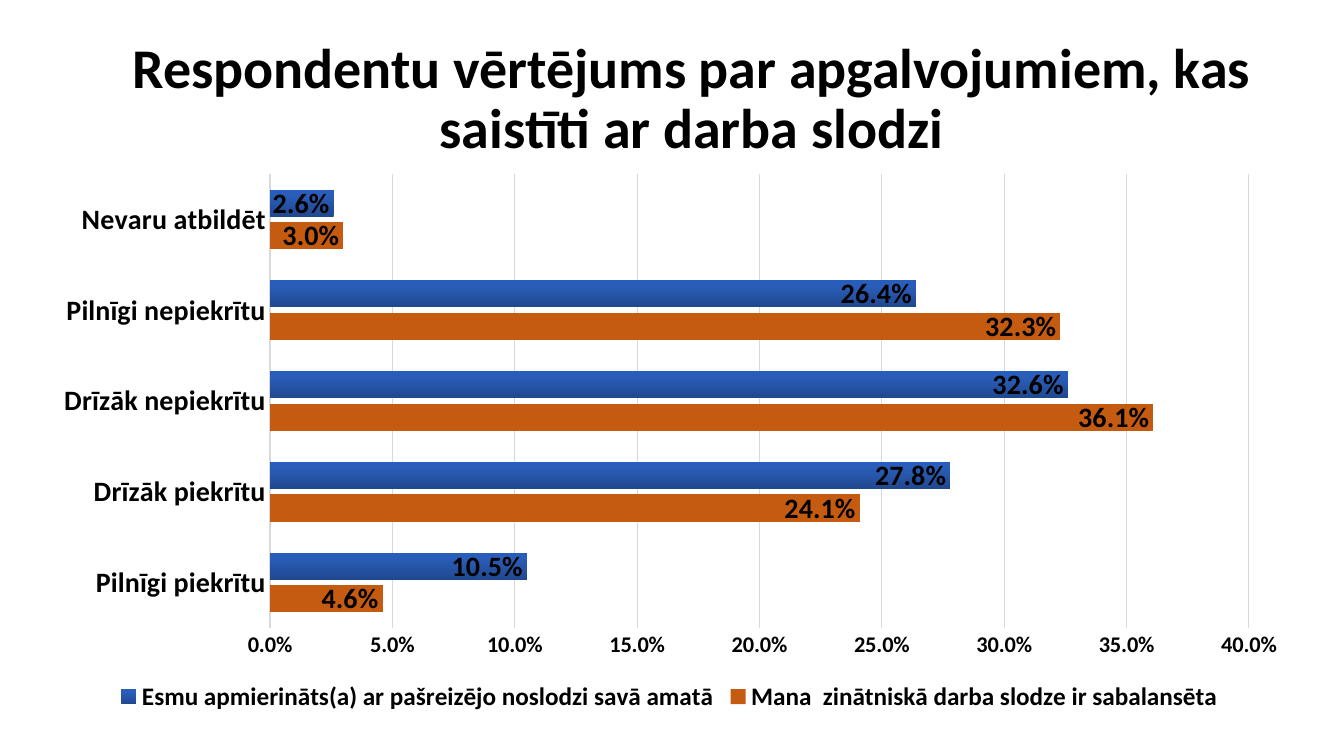
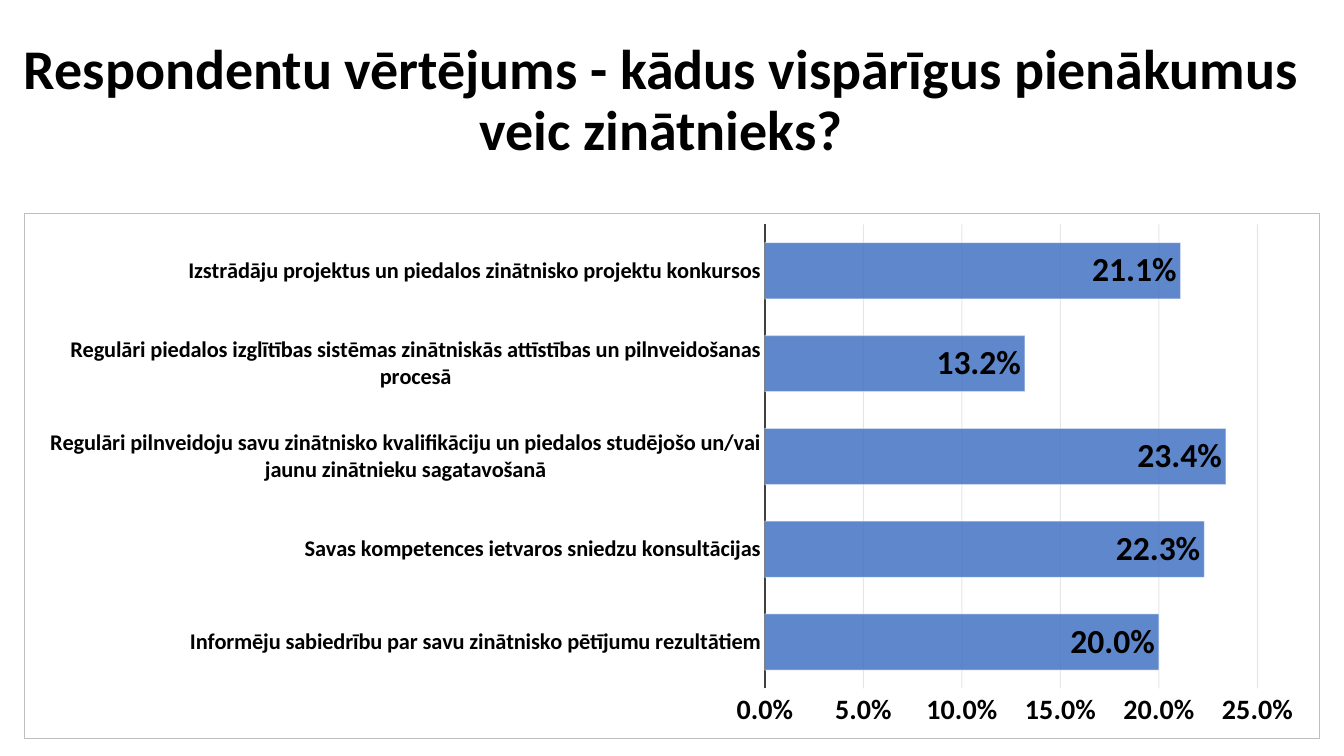
from copy import deepcopy

from lxml.etree import SubElement
from pptx import Presentation
from pptx.chart.data import CategoryChartData
from pptx.dml.color import RGBColor
from pptx.enum.chart import XL_CHART_TYPE, XL_LABEL_POSITION, XL_LEGEND_POSITION, XL_TICK_MARK
from pptx.enum.text import MSO_ANCHOR, PP_ALIGN
from pptx.oxml import parse_xml
from pptx.oxml.ns import nsdecls, qn
from pptx.util import Emu, Pt

PX = 914400 / 100.8
FONT = "Calibri"
PERCENT = "0.0%"
COLORS = {
    "text": "000000", "orange": "C55A11", "blue": "4472C4", "white": "FFFFFF",
    "grid": "D9D9D9", "faint": "0D0D0D", "axis": "404040", "frame": "BFBFBF",
}
BLUE_GRADIENT = [(0, "20488F"), (0.8, "2A5DB9"), (1, "275DBD")]

# Boxes are left, top, width, height in px; alpha is in percent
SLIDES = [
    {
        "title": "Respondentu vērtējums par apgalvojumiem, kas saistīti ar darba slodzi",
        "title_box": (112, 38, 1159, 125),
        "chart_box": (38, 163, 1263, 554),
        "plot_box": (270, 174, 979, 454),
        "categories": ["Pilnīgi piekrītu", "Drīzāk piekrītu", "Drīzāk nepiekrītu",
                       "Pilnīgi nepiekrītu", "Nevaru atbildēt"],
        "series": [
            ("Mana  zinātniskā darba slodze ir sabalansēta",
             [0.046, 0.241, 0.361, 0.323, 0.03], "orange"),
            ("Esmu apmierināts(a) ar pašreizējo noslodzi savā amatā",
             [0.105, 0.278, 0.326, 0.264, 0.026], "gradient"),
        ],
        "category_size": 20, "value_size": 16, "label_size": 20,
        "axis_line": ("grid", 1), "grid": ("grid", 100), "maximum": 0.4,
        "gap": 115, "overlap": -20, "legend": True, "frame": False,
    },
    {
        "title": "Respondentu vērtējums - kādus vispārīgus pienākumus veic zinātnieks?",
        "title_box": (13, 29, 1296, 146),
        "chart_box": (24, 213, 1296, 526),
        "plot_box": (765, 224, 493, 465),
        "categories": [
            "Informēju sabiedrību par savu zinātnisko pētījumu rezultātiem",
            "Savas kompetences ietvaros sniedzu konsultācijas",
            "Regulāri pilnveidoju savu zinātnisko kvalifikāciju un piedalos "
            "studējošo un/vai jaunu zinātnieku sagatavošanā",
            "Regulāri piedalos izglītības sistēmas zinātniskās attīstības "
            "un pilnveidošanas procesā",
            "Izstrādāju projektus un piedalos zinātnisko projektu konkursos",
        ],
        "series": [("Series 1", [0.2, 0.223, 0.234, 0.132, 0.211], "blue")],
        "category_size": 16, "value_size": 20, "label_size": 24,
        "axis_line": ("axis", 1.5), "grid": ("faint", 10), "maximum": 0.25,
        "gap": 65, "overlap": 0, "legend": False, "frame": True,
    },
]


def style_font(font, size, bold=True):
    font.name = FONT
    font.size = Pt(size)
    font.bold = bold
    font.color.rgb = RGBColor.from_string(COLORS["text"])


def paint(fill, color, alpha=100):
    fill.solid()
    fill.fore_color.rgb = RGBColor.from_string(COLORS[color])
    if alpha < 100:
        tint = fill._xPr.find(".//" + qn("a:srgbClr"))
        SubElement(tint, qn("a:alpha")).set("val", str(alpha * 1000))


presentation = Presentation()
presentation.slide_width = Emu(round(1344 * PX))
presentation.slide_height = Emu(round(756 * PX))

for content in SLIDES:
    slide = presentation.slides.add_slide(presentation.slide_layouts[6])

    # Title
    heading = slide.shapes.add_textbox(*[Emu(round(n * PX)) for n in content["title_box"]])
    heading.text_frame.word_wrap = True
    heading.text_frame.vertical_anchor = MSO_ANCHOR.MIDDLE
    paragraph = heading.text_frame.paragraphs[0]
    paragraph.alignment = PP_ALIGN.CENTER
    paragraph.line_spacing = 0.9
    run = paragraph.add_run()
    run.text = content["title"]
    style_font(run.font, 40)

    # Chart
    answers = CategoryChartData(number_format=PERCENT)
    answers.categories = content["categories"]
    for name, values, _ in content["series"]:
        answers.add_series(name, values)
    chart = slide.shapes.add_chart(
        XL_CHART_TYPE.BAR_CLUSTERED,
        *[Emu(round(n * PX)) for n in content["chart_box"]], answers).chart
    chart.has_title = False
    style_font(chart.font, 10, bold=False)

    # Frame around the chart
    outline = "<a:noFill/>"
    if content["frame"]:
        outline = f'<a:solidFill><a:srgbClr val="{COLORS["frame"]}"/></a:solidFill>'
    chart._chartSpace.find(qn("c:txPr")).addprevious(parse_xml(
        f'<c:spPr {nsdecls("c", "a")}><a:noFill/><a:ln w="9525">{outline}</a:ln></c:spPr>'))

    # Plot area, as shares of the chart
    left, top, width, height = content["chart_box"]
    plot_left, plot_top, plot_width, plot_height = content["plot_box"]
    shares = {"x": (plot_left - left) / width, "y": (plot_top - top) / height,
              "w": plot_width / width, "h": plot_height / height}
    plot_area = chart._chartSpace.find(".//" + qn("c:plotArea"))
    for automatic in plot_area.findall(qn("c:layout")):
        plot_area.remove(automatic)
    places = "".join(f'<c:{side} val="{share:.4f}"/>' for side, share in shares.items())
    plot_area.insert(0, parse_xml(
        f'<c:layout {nsdecls("c")}><c:manualLayout><c:layoutTarget val="inner"/>'
        f'<c:xMode val="edge"/><c:yMode val="edge"/>{places}</c:manualLayout></c:layout>'))

    # Axes
    for axis, size in ((chart.category_axis, content["category_size"]),
                       (chart.value_axis, content["value_size"])):
        axis.major_tick_mark = axis.minor_tick_mark = XL_TICK_MARK.NONE
        style_font(axis.tick_labels.font, size)
    axis_color, axis_width = content["axis_line"]
    category_line = chart.category_axis.format.line
    paint(category_line.fill, axis_color)
    category_line.width = Pt(axis_width)

    scale = chart.value_axis
    scale.minimum_scale = 0
    scale.maximum_scale = content["maximum"]
    scale.major_unit = 0.05
    scale.tick_labels.number_format = PERCENT
    scale.tick_labels.number_format_is_linked = False
    scale.format.line.fill.background()
    scale.has_major_gridlines = True
    grid_line = scale.major_gridlines.format.line
    paint(grid_line.fill, *content["grid"])
    grid_line.width = Pt(0.75)

    # Bars and their labels
    plot = chart.plots[0]
    plot.gap_width = content["gap"]
    plot.overlap = content["overlap"]
    plot.vary_by_categories = False
    for bars, (_, _, color) in zip(plot.series, content["series"]):
        bars.invert_if_negative = False
        fill = bars.format.fill
        if color == "gradient":
            fill.gradient()
            fill.gradient_angle = 90
            stops = bars._element.find(".//" + qn("a:gsLst"))
            stops.append(deepcopy(stops[0]))
            for stop, (position, tone) in zip(fill.gradient_stops, BLUE_GRADIENT):
                stop.position = position
                stop.color.rgb = RGBColor.from_string(tone)
        elif color == "blue":
            paint(fill, color, 85)
            paint(bars.format.line.fill, "white", 50)
            bars.format.line.width = Pt(0.75)
        else:
            paint(fill, color)
        labels = bars.data_labels
        labels.show_value = True
        labels.position = XL_LABEL_POSITION.INSIDE_END
        labels.number_format = PERCENT
        labels.number_format_is_linked = False
        style_font(labels.font, content["label_size"])

    # Legend
    chart.has_legend = content["legend"]
    if content["legend"]:
        chart.legend.position = XL_LEGEND_POSITION.BOTTOM
        chart.legend.include_in_layout = False
        style_font(chart.legend.font, 18)

presentation.save("out.pptx")
